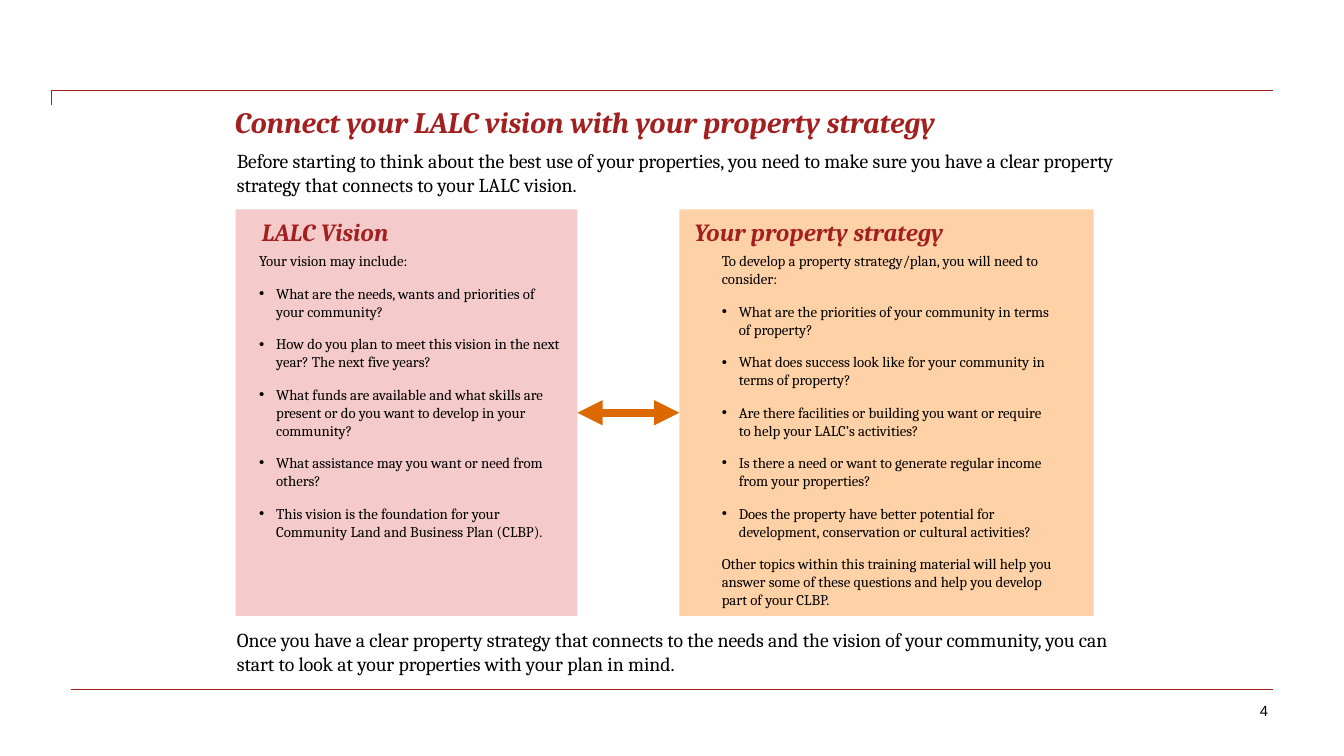
from lxml.etree import SubElement
from pptx import Presentation
from pptx.dml.color import RGBColor
from pptx.enum.shapes import MSO_CONNECTOR, MSO_SHAPE
from pptx.enum.text import MSO_ANCHOR, MSO_AUTO_SIZE, PP_ALIGN
from pptx.oxml.ns import qn
from pptx.util import Cm, Pt

RED, ORANGE, BLACK = "A32020", "DC6900", "000000"
PINK_PANEL, ORANGE_PANEL = "EA9696", "FFA451"
PANEL_TOP, PANEL_HEIGHT = 5.28, 10.24
HEADING_TOP, LIST_TOP = 5.46, 6.35
BULLET_INDENT = Cm(0.43)

TITLE = {"name": "Cambria", "size": Pt(21.2), "bold": True, "italic": True}
HEADING = {**TITLE, "size": Pt(17.6)}
STATEMENT = {"name": "Cambria", "size": Pt(14.1), "bold": False}
DETAIL = {**STATEMENT, "size": Pt(10.6)}
PAGE = {"name": "Arial", "size": Pt(10.6)}

VISION = [
    "Your vision may include:",
    "• What are the needs, wants and priorities of your community?",
    "• How do you plan to meet this vision in the next year? The next five years?",
    "• What funds are available and what skills are present or do you want to "
    "develop in your community?",
    "• What assistance may you want or need from others?",
    "• This vision is the foundation for your Community Land and Business Plan (CLBP).",
]
STRATEGY = [
    "To develop a property strategy/plan, you will need to consider:",
    "• What are the priorities of your community in terms of property?",
    "• What does success look like for your community in terms of property?",
    "• Are there facilities or building you want or require to help your LALC’s activities?",
    "• Is there a need or want to generate regular income from your properties?",
    "• Does the property have better potential for development, conservation or "
    "cultural activities?",
    "Other topics within this training material will help you answer some of these "
    "questions and help you develop part of your CLBP.",
]
INTRO = ("Before starting to think about the best use of your properties, you need to make "
         "sure you have a clear property strategy that connects to your LALC vision.")
CLOSING = ("Once you have a clear property strategy that connects to the needs and the vision "
           "of your community, you can start to look at your properties with your plan in mind.")


def rgb(colour):
    return RGBColor.from_string(colour)


def set_all(target, values):
    for attribute, value in values.items():
        setattr(target, attribute, value)


def place(holder, left, top, width, height):
    set_all(holder, {"left": Cm(left), "top": Cm(top),
                     "width": Cm(width), "height": Cm(height)})
    return holder


def text_box(slide, *box):
    return slide.shapes.add_textbox(*map(Cm, box))


def write(holder, lines, font, colour, before=0, after=5.3,
          align=PP_ALIGN.LEFT, anchor=MSO_ANCHOR.TOP, margin=0):
    """Fill a text holder; lines that start with a bullet become list items."""
    frame = holder.text_frame
    set_all(frame, {"word_wrap": True, "auto_size": MSO_AUTO_SIZE.NONE,
                    "vertical_anchor": anchor})
    set_all(frame, {f"margin_{side}": Cm(margin)
                    for side in ("left", "top", "right", "bottom")})
    for index, line in enumerate(lines):
        paragraph = frame.add_paragraph() if index else frame.paragraphs[0]
        set_all(paragraph, {"alignment": align, "space_before": Pt(before),
                            "space_after": Pt(after)})
        run = paragraph.add_run()
        run.text = line.removeprefix("• ")
        set_all(run.font, font)
        run.font.color.rgb = rgb(colour)
        set_bullet(paragraph, line.startswith("• "))


def set_bullet(paragraph, bulleted):
    properties = paragraph._p.get_or_add_pPr()
    indent = BULLET_INDENT if bulleted else 0
    properties.set("marL", str(indent))
    properties.set("indent", str(-indent))
    if bulleted:
        SubElement(properties, qn("a:buChar")).set("char", "•")
    else:
        SubElement(properties, qn("a:buNone"))


def add_panel(slide, left, width, colour):
    """Add a half-transparent panel behind the text."""
    panel = slide.shapes.add_shape(MSO_SHAPE.RECTANGLE, Cm(left), Cm(PANEL_TOP),
                                   Cm(width), Cm(PANEL_HEIGHT))
    panel.shadow.inherit = False
    panel.fill.solid()
    panel.fill.fore_color.rgb = rgb(colour)
    solid = panel.element.spPr.find(qn("a:solidFill"))
    SubElement(solid[0], qn("a:alpha")).set("val", "50000")
    panel.line.fill.background()
    panel.element.getparent().insert(2, panel.element)
    return panel


def add_line(slide, start, end, colour, weight):
    line = slide.shapes.add_connector(MSO_CONNECTOR.STRAIGHT, *map(Cm, start + end))
    line.line.color.rgb = rgb(colour)
    line.line.width = Pt(weight)
    SubElement(line._element.spPr, qn("a:effectLst"))
    return line


def add_double_arrow(slide, first, second):
    middle = PANEL_TOP + PANEL_HEIGHT / 2
    arrow = add_line(slide, (14.55, middle), (17.12, middle), ORANGE, 6)
    arrow.begin_connect(first, 3)
    arrow.end_connect(second, 1)
    for end in ("a:headEnd", "a:tailEnd"):
        SubElement(arrow.line._get_or_add_ln(), qn(end)).set("type", "triangle")


def add_header_rule(slide):
    outline = slide.shapes.build_freeform(Cm(1.3), Cm(2.64))
    outline.add_line_segments([(Cm(1.3), Cm(2.29)), (Cm(32.08), Cm(2.29))], close=False)
    rule = outline.convert_to_shape()
    rule.shadow.inherit = False
    rule.fill.background()
    rule.line.color.rgb = rgb(RED)
    rule.line.width = Pt(0.75)


def main():
    deck = Presentation()
    set_all(deck, {"slide_width": Cm(33.87), "slide_height": Cm(19.05)})
    slide = deck.slides.add_slide(deck.slide_layouts.get_by_name("Comparison"))
    title, vision_heading, vision_list, strategy_heading, strategy_list = slide.placeholders

    add_header_rule(slide)
    add_line(slide, (1.78, 17.37), (32.08, 17.37), RED, 0.75)
    vision_panel = add_panel(slide, 5.94, 8.61, PINK_PANEL)
    strategy_panel = add_panel(slide, 17.12, 10.44, ORANGE_PANEL)
    add_double_arrow(slide, vision_panel, strategy_panel)

    write(place(title, 5.92, 2.62, 22.05, 2.06),
          ["Connect your LALC vision with your property strategy"], TITLE, RED, after=0)
    write(place(vision_heading, 6.6, HEADING_TOP, 7.95, 0.88), ["LALC Vision"], HEADING, RED)
    write(place(strategy_heading, 17.5, HEADING_TOP, 7.67, 0.88),
          ["Your property strategy"], HEADING, RED)
    write(place(vision_list, 6.53, LIST_TOP, 7.6, 8.48), VISION, DETAIL, BLACK, before=5.3)
    write(place(strategy_list, 18.19, LIST_TOP, 8.43, 8.94), STRATEGY, DETAIL, BLACK, before=5.3)

    for top, statement in ((3.76, INTRO), (15.82, CLOSING)):
        write(text_box(slide, 5.97, top, 22.43, 1.6), [statement], STATEMENT, BLACK)
    write(text_box(slide, 22.96, 17.45, 9.25, 0.89), ["4"], PAGE, BLACK, after=0,
          align=PP_ALIGN.RIGHT, anchor=MSO_ANCHOR.MIDDLE, margin=0.25)
    deck.save("out.pptx")


if __name__ == "__main__":
    main()
